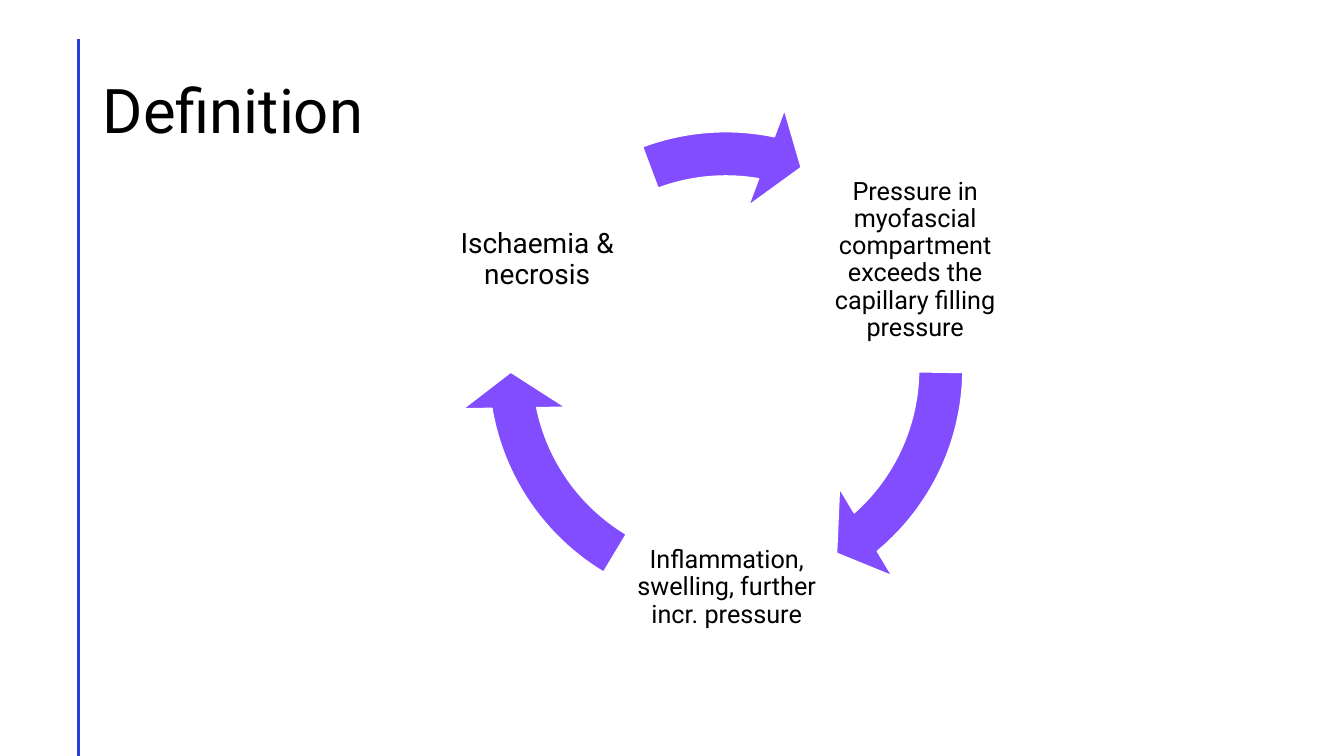
from lxml.etree import SubElement
from pptx import Presentation
from pptx.dml.color import RGBColor
from pptx.enum.shapes import MSO_CONNECTOR, MSO_SHAPE
from pptx.enum.text import MSO_ANCHOR, PP_ALIGN
from pptx.oxml.ns import qn
from pptx.util import Pt

COLORS = {"rule": "2E3CDB", "arrow": "814DFF", "outline": "FFFFFF", "text": "000000"}
FONT = "Roboto"
STAGE_SIZE = 161.28
CYCLE_LEFT, CYCLE_TOP, CYCLE_SIZE = 328.3, 73.4, 380.2

# Stage text, font size, left, top
STAGES = [
    ("Pressure in myofascial compartment exceeds the capillary filling pressure", 18, 573.1, 105.1),
    ("Inflammation, swelling, further incr. pressure", 18, 438.5, 339.1),
    ("Ischaemia & necrosis", 20, 303.1, 105.1),
]
# Start and end angle of each arrow, in degrees clockwise from the right
ARROW_ANGLES = [(0.88, 49.37), (121.02, 169.52), (249.47, 280.92)]


def color(name):
    return RGBColor.from_string(COLORS[name])


def write_text(frame, text, size, align):
    frame.word_wrap = True
    frame.vertical_anchor = MSO_ANCHOR.MIDDLE
    para = frame.paragraphs[0]
    para.alignment = align
    para.line_spacing = 0.9
    span = para.add_run()
    span.text = text
    span.font.name = FONT
    span.font.size = Pt(size)
    span.font.color.rgb = color("text")


def add_rule(page, x, top, bottom):
    rule = page.shapes.add_connector(MSO_CONNECTOR.STRAIGHT, Pt(x), Pt(top), Pt(x), Pt(bottom))
    rule.line.color.rgb = color("rule")
    rule.line.width = Pt(2)
    SubElement(rule._element.spPr, qn("a:effectLst"))


def set_title(page, text):
    title = page.shapes.title
    title.left, title.top, title.width, title.height = Pt(66.2), Pt(28.8), Pt(828), Pt(104.4)
    write_text(title.text_frame, text, 44, PP_ALIGN.LEFT)


def add_stage(page, text, size, left, top):
    box = page.shapes.add_textbox(Pt(left), Pt(top), Pt(STAGE_SIZE), Pt(STAGE_SIZE))
    frame = box.text_frame
    frame.margin_left = frame.margin_right = frame.margin_top = frame.margin_bottom = Pt(2)
    write_text(frame, text, size, PP_ALIGN.CENTER)


def add_cycle_arrow(page, start, end):
    arrow = page.shapes.add_shape(
        MSO_SHAPE.CIRCULAR_ARROW, Pt(CYCLE_LEFT), Pt(CYCLE_TOP), Pt(CYCLE_SIZE), Pt(CYCLE_SIZE)
    )
    # One degree is 0.6 of an adjustment unit
    settings = [0.083, 9.61 * 0.6, end * 0.6, start * 0.6, 0.096]
    for index, value in enumerate(settings):
        arrow.adjustments[index] = value
    arrow.shadow.inherit = False
    arrow.fill.solid()
    arrow.fill.fore_color.rgb = color("arrow")
    arrow.line.color.rgb = color("outline")
    arrow.line.width = Pt(1)


def main():
    deck = Presentation()
    deck.slide_width, deck.slide_height = Pt(960), Pt(540)
    page = deck.slides.add_slide(deck.slide_layouts[5])

    # Heading
    add_rule(page, 56.2, 28, 540)
    set_title(page, "Definition")

    # Cycle of stages, each followed by its arrow
    for stage, angles in zip(STAGES, ARROW_ANGLES):
        add_stage(page, *stage)
        add_cycle_arrow(page, *angles)

    deck.save("out.pptx")


if __name__ == "__main__":
    main()
